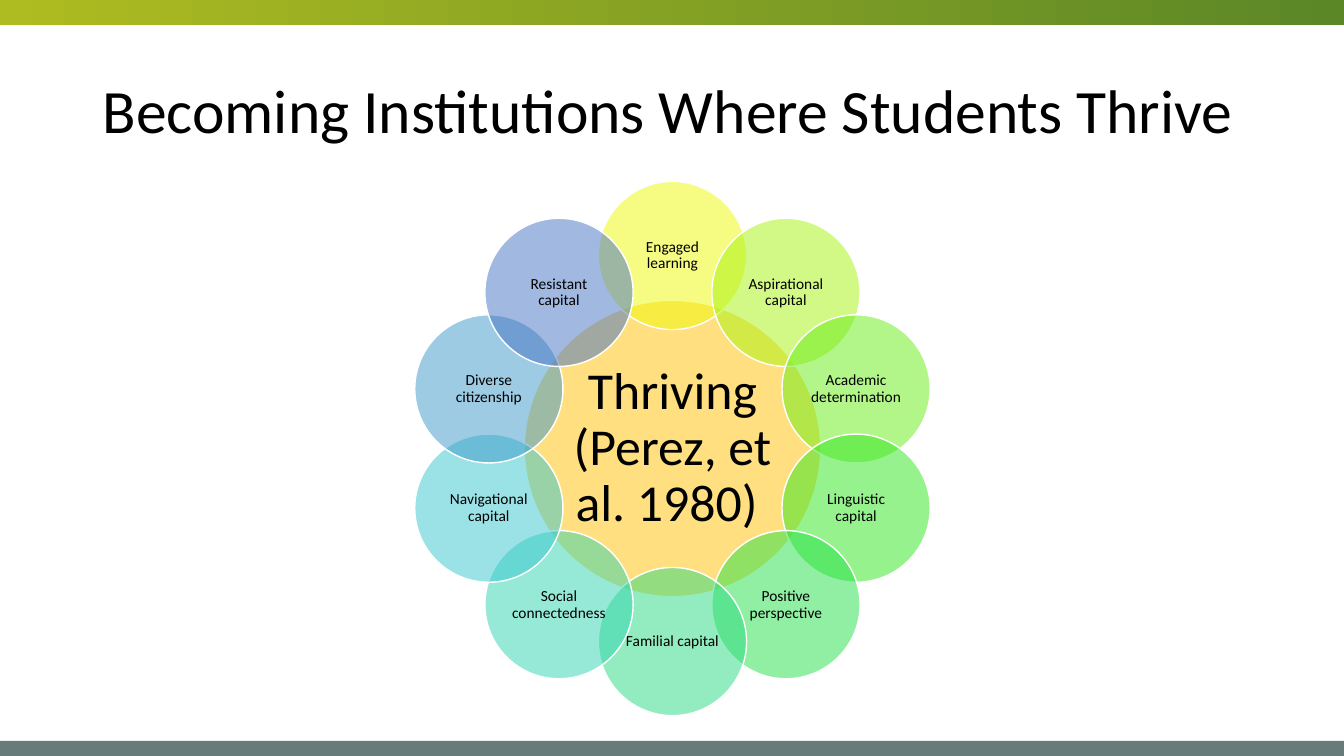
"""Build the slide on institutions where students thrive."""
from dataclasses import dataclass
from math import cos, radians, sin

from lxml.etree import SubElement
from pptx import Presentation
from pptx.dml.color import RGBColor
from pptx.enum.shapes import MSO_SHAPE as Preset
from pptx.enum.text import MSO_ANCHOR as Anchor, PP_ALIGN as Align
from pptx.oxml.ns import qn
from pptx.shapes.autoshape import Shape
from pptx.slide import Slide
from pptx.text.text import TextFrame
from pptx.util import Inches, Pt


@dataclass(frozen=True)
class Theme:
    """Colours, font and type sizes."""
    font: str = "Calibri"
    text: str = "000000"
    outline: str = "FFFFFF"
    bar_start: str = "AFBC21"
    bar_end: str = "5B8727"
    footer: str = "667B7A"
    title_size: int = 44
    core_size: int = 37
    petal_size: int = 11
    opacity: int = 50


@dataclass(frozen=True)
class Circle:
    """A labelled translucent circle."""
    label: str
    color: str


THEME = Theme()
SLIDE_WIDTH, SLIDE_HEIGHT = 13.33, 7.5
CENTER_X, CENTER_Y = 6.67, 4.45
ORBIT = 1.915
CORE_DIAMETER, PETAL_DIAMETER = 2.94, 1.47
CORE = Circle("Thriving (Perez, et al. 1980) ", "FFC000")
PETALS = [
    Circle("Engaged learning", "EFF907"),
    Circle("Aspirational capital", "A7F30E"),
    Circle("Academic determination", "67ED15"),
    Circle("Linguistic capital", "2EE71C"),
    Circle("Positive perspective", "23E148"),
    Circle("Familial capital", "29DB80"),
    Circle("Social connectedness", "30D5B0"),
    Circle("Navigational capital", "37C6CF"),
    Circle("Diverse citizenship", "3D98CA"),
    Circle("Resistant capital", "4472C4"),
]


def write_text(frame: TextFrame, text: str, size: int, align: Align) -> None:
    """Write one styled paragraph, vertically centred."""
    frame.word_wrap = True
    frame.vertical_anchor = Anchor.MIDDLE
    para = frame.paragraphs[0]
    para.text = text
    para.alignment = align
    para.line_spacing = 0.9
    para.font.name = THEME.font
    para.font.size = Pt(size)
    para.font.color.rgb = RGBColor.from_string(THEME.text)


def add_bar(page: Slide, top: float, height: float) -> Shape:
    """Add a full-width bar without outline."""
    bar = page.shapes.add_shape(
        Preset.RECTANGLE, 0, Inches(top), Inches(SLIDE_WIDTH), Inches(height))
    bar.shadow.inherit = False
    bar.line.fill.background()
    return bar


def add_bars(page: Slide) -> None:
    """Add the gradient header bar and the plain footer bar."""
    header = add_bar(page, -0.01, 0.26)
    header.fill.gradient()
    header.fill.gradient_angle = 0
    for stop, color in zip(header.fill.gradient_stops, (THEME.bar_start, THEME.bar_end)):
        stop.color.rgb = RGBColor.from_string(color)
    footer = add_bar(page, 7.35, 0.16)
    footer.fill.solid()
    footer.fill.fore_color.rgb = RGBColor.from_string(THEME.footer)


def add_title(page: Slide, text: str) -> None:
    """Add the slide title."""
    box = page.shapes.add_textbox(Inches(0.92), Inches(0.4), Inches(11.5), Inches(1.45))
    write_text(box.text_frame, text, THEME.title_size, Align.LEFT)


def add_circle(page: Slide, circle: Circle, x: float, y: float,
               diameter: float, size: int, inset: float) -> None:
    """Add a labelled translucent circle centred on a point."""
    shape = page.shapes.add_shape(
        Preset.OVAL, Inches(x - diameter / 2), Inches(y - diameter / 2),
        Inches(diameter), Inches(diameter))
    shape.shadow.inherit = False
    shape.fill.solid()
    shape.fill.fore_color.rgb = RGBColor.from_string(circle.color)
    fill_color = shape.element.spPr.find(qn("a:solidFill")).find(qn("a:srgbClr"))
    SubElement(fill_color, qn("a:alpha"), val=str(THEME.opacity * 1000))
    shape.line.color.rgb = RGBColor.from_string(THEME.outline)
    shape.line.width = Pt(1)
    frame = shape.text_frame
    frame.margin_left = frame.margin_right = Inches(inset)
    frame.margin_top = frame.margin_bottom = Inches(inset)
    write_text(frame, circle.label, size, Align.CENTER)


def add_flower(page: Slide) -> None:
    """Add the core circle and the petals evenly spaced around it."""
    add_circle(page, CORE, CENTER_X, CENTER_Y, CORE_DIAMETER, THEME.core_size, 0.05)
    for index, petal in enumerate(PETALS):
        angle = radians(360 / len(PETALS) * index)
        add_circle(page, petal, CENTER_X + ORBIT * sin(angle),
                   CENTER_Y - ORBIT * cos(angle), PETAL_DIAMETER, THEME.petal_size, 0.02)


def main() -> None:
    """Build and save the deck."""
    deck = Presentation()
    deck.slide_width, deck.slide_height = Inches(SLIDE_WIDTH), Inches(SLIDE_HEIGHT)
    page = deck.slides.add_slide(deck.slide_layouts[6])
    add_bars(page)
    add_title(page, "Becoming Institutions Where Students Thrive")
    add_flower(page)
    deck.save("out.pptx")


if __name__ == "__main__":
    main()
